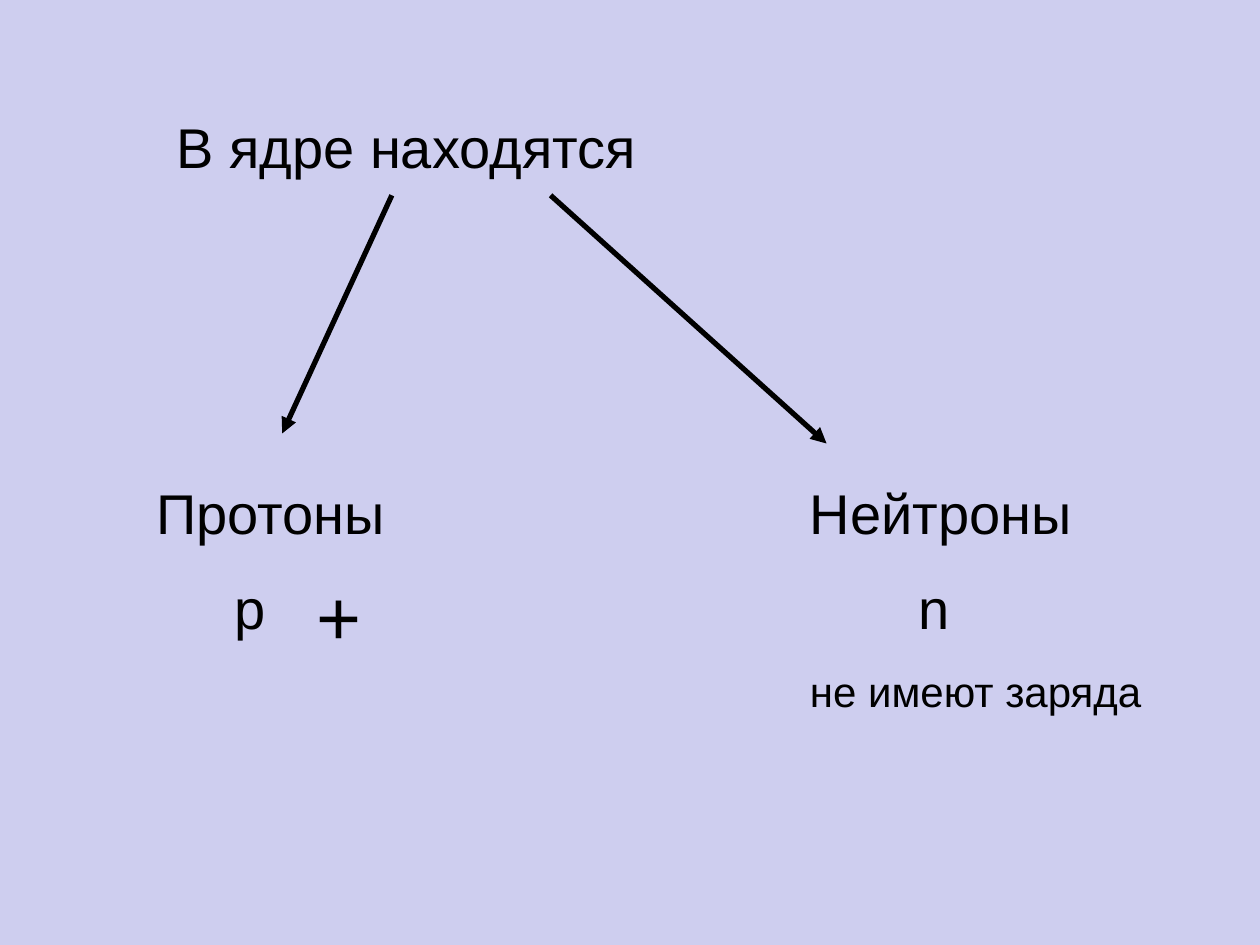
from dataclasses import dataclass
from typing import Any

from lxml import etree
from pptx import Presentation
from pptx.dml.color import RGBColor
from pptx.enum.shapes import MSO_CONNECTOR
from pptx.enum.text import MSO_ANCHOR, MSO_AUTO_SIZE, PP_ALIGN
from pptx.oxml.ns import qn
from pptx.util import Inches, Pt

STRAIGHT = MSO_CONNECTOR.STRAIGHT
TOP = MSO_ANCHOR.TOP
GROW = MSO_AUTO_SIZE.SHAPE_TO_FIT_TEXT
LEFT = PP_ALIGN.LEFT
WIDTH, HEIGHT = Inches(10), Inches(7.5)
COLORS = {"background": "CECEEF", "ink": "000000"}
TITLE_ONLY = 5


@dataclass
class NucleusSlide:
    """Draws titles, labels and arrows placed on a grid of 100 columns and 75 rows."""

    slide: Any
    font: str = "Arial"
    size: int = 32
    columns: int = 100
    rows: int = 75

    def point(self, column, row):
        return round(column * WIDTH / self.columns), round(row * HEIGHT / self.rows)

    def background(self):
        fill = self.slide.background.fill
        fill.solid()
        fill.fore_color.rgb = RGBColor.from_string(COLORS["background"])

    def set_text(self, shape, lines, size):
        frame = shape.text_frame
        frame.word_wrap = True
        frame.auto_size = GROW
        frame.vertical_anchor = TOP
        for number, (text, indent) in enumerate(lines):
            paragraph = frame.add_paragraph() if number else frame.paragraphs[0]
            paragraph.alignment = LEFT
            properties = paragraph._p.get_or_add_pPr()
            properties.set("marL", str(Inches(indent)))
            properties.set("indent", "0")
            spacing = etree.SubElement(properties, qn("a:spcBef"))
            etree.SubElement(spacing, qn("a:spcPct")).set("val", "50000")
            run = paragraph.add_run()
            run.text = text
            run.font.name = self.font
            run.font.size = Pt(size)
            run.font.color.rgb = RGBColor.from_string(COLORS["ink"])

    def title(self, text, place, extent):
        heading = self.slide.shapes.title
        heading.left, heading.top = self.point(*place)
        heading.width, heading.height = self.point(*extent)
        self.set_text(heading, [(text, 0)], self.size)

    def label(self, lines, place, extent, size=None):
        box = self.slide.shapes.add_textbox(*self.point(*place), *self.point(*extent))
        self.set_text(box, lines, size or self.size)

    def arrow(self, start, end):
        branch = self.slide.shapes.add_connector(
            STRAIGHT, *self.point(*start), *self.point(*end)
        )
        branch.line.width = Pt(3)
        branch.line.color.rgb = RGBColor.from_string(COLORS["ink"])
        properties = branch._element.spPr
        outline = properties.find(qn("a:ln"))
        etree.SubElement(outline, qn("a:tailEnd")).set("type", "triangle")
        etree.SubElement(properties, qn("a:effectLst"))


def main():
    deck = Presentation()
    deck.slide_width, deck.slide_height = WIDTH, HEIGHT
    nucleus = NucleusSlide(deck.slides.add_slide(deck.slide_layouts[TITLE_ONLY]))
    nucleus.background()
    nucleus.title("В ядре находятся", (13, 8.4), (74.8, 6.3))

    branch_row, particle_row, neutron_column = 15.5, 37.5, 63.3
    nucleus.arrow((31.1, branch_row), (22.4, 34.4))
    nucleus.label([("Протоны", 0), ("p", 0.62)], (11.4, particle_row), (26.8, 14.3))
    nucleus.arrow((43.7, branch_row), (65.6, 35.2))
    nucleus.label(
        [("Нейтроны", 0), ("n", 0.86)], (neutron_column, particle_row), (32.3, 14.5)
    )
    nucleus.label([("+", 0.17)], (22.4, 44.6), (10.2, 8.3), size=44)
    nucleus.label(
        [("не имеют заряда", 0)], (neutron_column, 52.3), (30.7, 5), size=24
    )
    deck.save("out.pptx")


if __name__ == "__main__":
    main()
